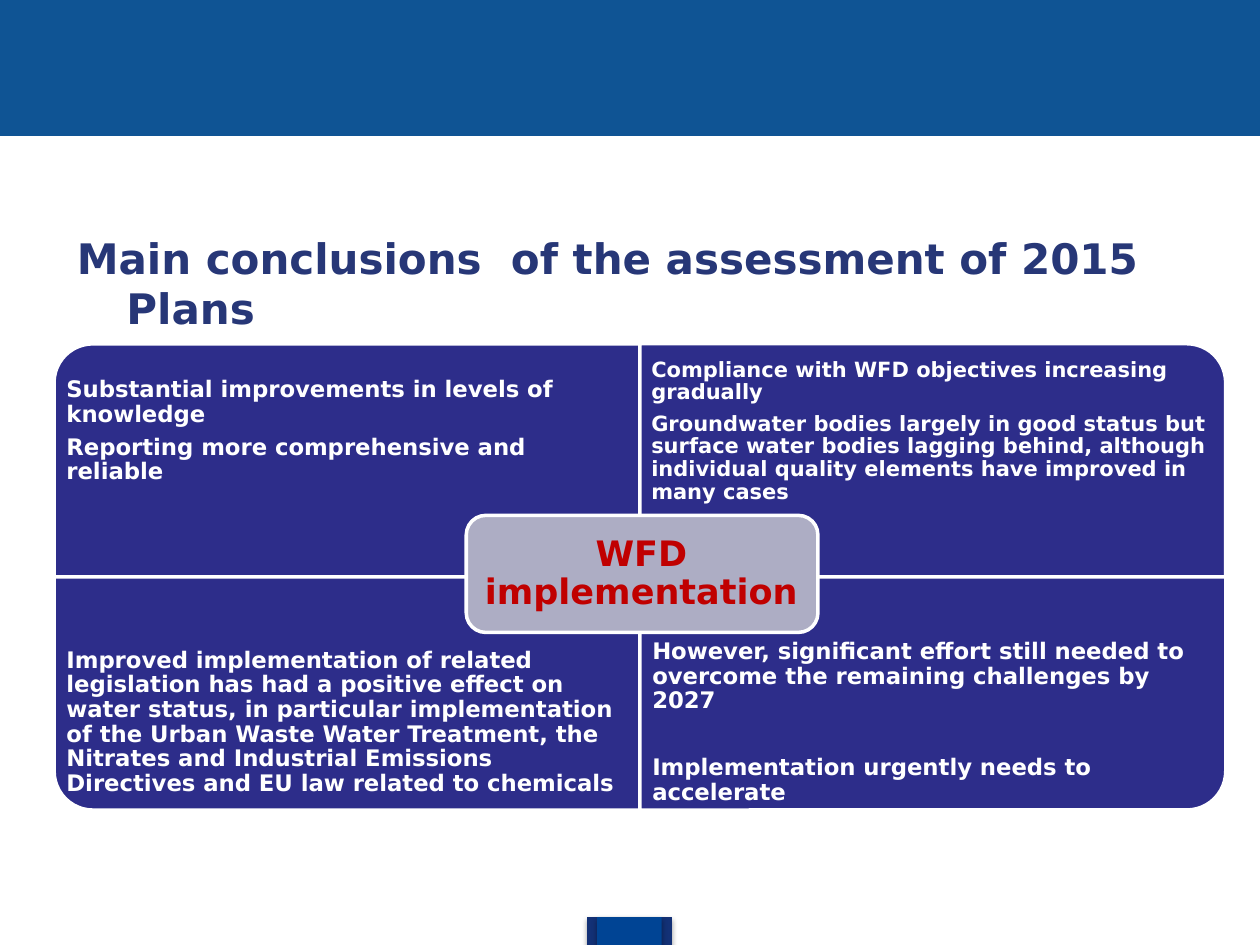
from dataclasses import dataclass

from lxml import etree
from pptx import Presentation
from pptx.dml.color import RGBColor
from pptx.enum.shapes import MSO_SHAPE
from pptx.enum.text import MSO_ANCHOR, PP_ALIGN
from pptx.oxml.ns import qn
from pptx.util import Cm, Pt


@dataclass(frozen=True)
class Theme:
    font: str = "DejaVu Sans"
    banner: str = "0F5494"
    footer_edge: str = "133176"
    footer: str = "004494"
    title: str = "273777"
    panel: str = "2D2D8A"
    hub: str = "ADADC4"
    hub_text: str = "C00000"
    white: str = "FFFFFF"
    title_size: int = 24
    hub_size: int = 20
    body_size: int = 13
    dense_size: int = 12


theme = Theme()

prs = Presentation()
prs.slide_width, prs.slide_height = Cm(25.4), Cm(19.05)
s = prs.slides.add_slide(prs.slide_layouts[6])


def add_block(kind, left, top, width, height, fill, line=None, line_width=0.75):
    sp = s.shapes.add_shape(kind, Cm(left), Cm(top), Cm(width), Cm(height))
    sp.shadow.inherit = False
    sp.fill.solid()
    sp.fill.fore_color.rgb = RGBColor.from_string(fill)
    if line:
        sp.line.color.rgb = RGBColor.from_string(line)
        sp.line.width = Pt(line_width)
    else:
        sp.line.fill.background()
    return sp


def add_text(left, top, width, height, paragraphs, size, color, inset=0.25, spacing=0.9, after=5):
    """Add a middle-anchored box of bold text, one paragraph per string."""
    tf = s.shapes.add_textbox(Cm(left), Cm(top), Cm(width), Cm(height)).text_frame
    tf.word_wrap = True
    tf.vertical_anchor = MSO_ANCHOR.MIDDLE
    tf.margin_left = tf.margin_right = tf.margin_top = tf.margin_bottom = Cm(inset)
    tf.text = "\n".join(paragraphs)
    for p in tf.paragraphs:
        p.line_spacing = spacing
        p.space_after = Pt(after)
        for r in p.runs:
            r.font.name, r.font.size, r.font.bold = theme.font, Pt(size), True
            r.font.color.rgb = RGBColor.from_string(color)
    return tf


# Banner and footer tab
add_block(MSO_SHAPE.RECTANGLE, 0, 0, 25.4, 2.74, theme.banner, theme.banner)
for left, width, fill, line in [
    (11.84, 1.7, theme.footer_edge, theme.footer_edge),
    (12.04, 1.3, theme.footer, None),
]:
    sp = add_block(MSO_SHAPE.RECTANGLE, left, 18.49, width, 0.56, fill, line)
    effects = sp._element.spPr.find(qn("a:effectLst"))
    shadow = etree.SubElement(effects, qn("a:outerShdw"), blurRad=str(Pt(3.1)),
                              dist=str(Pt(1.8)), dir="5400000", rotWithShape="0")
    black = etree.SubElement(shadow, qn("a:srgbClr"), val="000000")
    etree.SubElement(black, qn("a:alpha"), val="35000")

# Title with a hanging indent
tf = add_text(1.3, 4.72, 22.86, 1.96, ["Main conclusions  of the assessment of 2015 Plans"],
              theme.title_size, theme.title, spacing=1.0, after=0)
pPr = tf.paragraphs[0]._p.get_or_add_pPr()
pPr.set("marL", str(Cm(1)))
pPr.set("indent", str(Cm(-1)))

# Four panels whose rounded corners point outwards
grid_left, grid_top, panel_w, panel_h, text_h = 1.09, 6.93, 11.81, 4.7, 3.53
panels = [
    (0, 0, 270, theme.body_size, [
        "Substantial improvements in levels of knowledge",
        "Reporting more comprehensive and reliable",
    ]),
    (0, 1, 0, theme.dense_size, [
        "Compliance with WFD objectives increasing gradually",
        "Groundwater bodies largely in good status but surface water bodies lagging behind, "
        "although individual quality elements have improved in many cases",
    ]),
    (1, 0, 180, theme.body_size, [
        "Improved implementation of related legislation has had a positive effect on water "
        "status, in particular implementation of the Urban Waste Water Treatment, the Nitrates "
        "and Industrial Emissions Directives and EU law related to chemicals",
    ]),
    (1, 1, 90, theme.body_size, [
        "However, significant effort still needed to overcome the remaining challenges by 2027",
        "Implementation urgently needs to accelerate",
    ]),
]
for row, col, rotation, size, paragraphs in panels:
    left, top = grid_left + col * panel_w, grid_top + row * panel_h
    # A quarter turn swaps width and height about the same centre
    w, h = (panel_h, panel_w) if rotation % 180 else (panel_w, panel_h)
    sp = add_block(MSO_SHAPE.ROUND_1_RECTANGLE, left + (panel_w - w) / 2,
                   top + (panel_h - h) / 2, w, h, theme.panel, theme.white, 2)
    sp.rotation = rotation
    text_top = top + row * (panel_h - text_h)
    inset = 0.23 if size == theme.dense_size else 0.25
    tf = add_text(left, text_top, panel_w, text_h, paragraphs, size, theme.white, inset)
tf.paragraphs[-1].space_before = Pt(19)

# Central hub
add_block(MSO_SHAPE.ROUNDED_RECTANGLE, 9.4, 10.39, 7.09, 2.36, theme.hub, theme.white, 2)
tf = add_text(9.5, 10.52, 6.86, 2.11, ["WFD implementation"],
              theme.hub_size, theme.hub_text, inset=0.2)
tf.paragraphs[0].alignment = PP_ALIGN.CENTER

prs.save("out.pptx")
